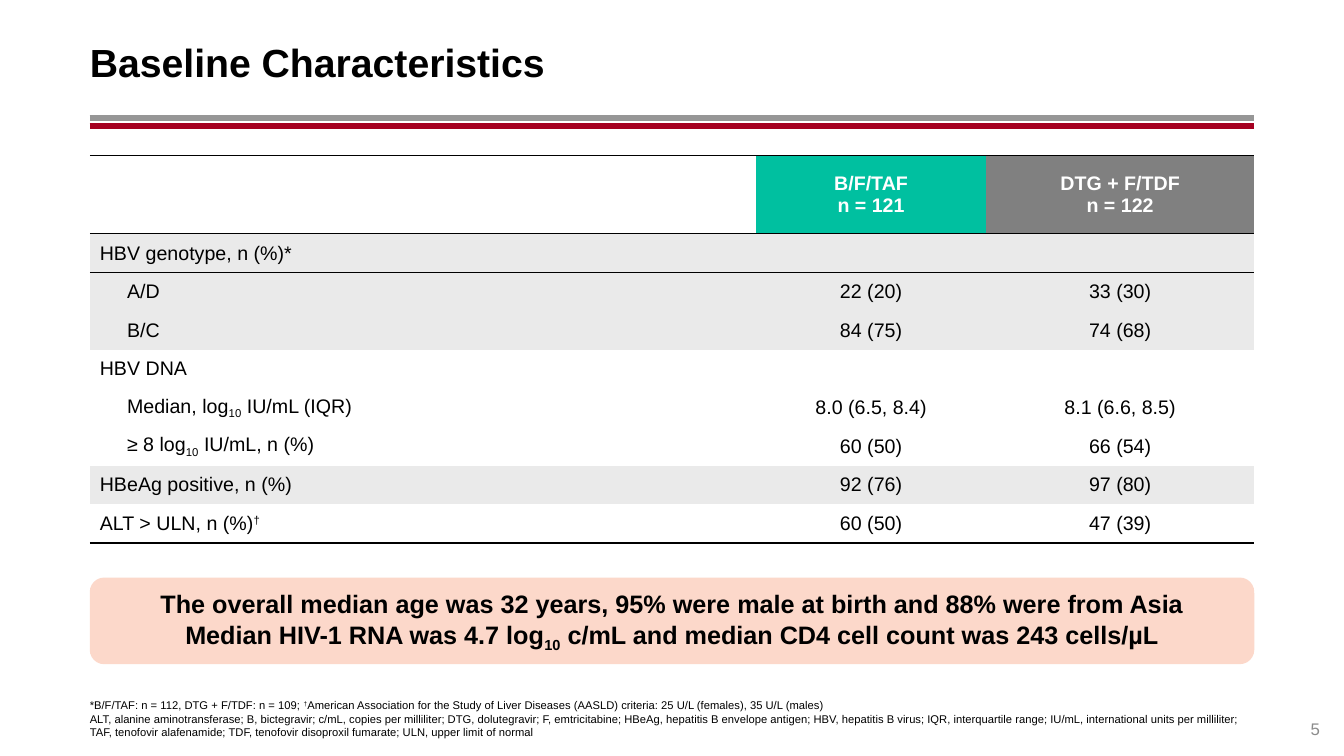
from pptx import Presentation
from pptx.dml.color import RGBColor
from pptx.enum.shapes import MSO_CONNECTOR, MSO_SHAPE
from pptx.enum.text import MSO_ANCHOR, PP_ALIGN
from pptx.oxml.ns import qn
from pptx.util import Inches, Pt
from lxml.etree import SubElement

BLACK = RGBColor(0x00, 0x00, 0x00)
WHITE = RGBColor(0xFF, 0xFF, 0xFF)
RULE_GRAY = RGBColor(0x96, 0x96, 0x96)
RULE_RED = RGBColor(0xA5, 0x00, 0x21)
NUMBER_GRAY = RGBColor(0x8C, 0x8C, 0x8C)
TEAL = RGBColor(0x00, 0xC0, 0xA0)
ARM_GRAY = RGBColor(0x80, 0x80, 0x80)
BAND_GRAY = RGBColor(0xEA, 0xEA, 0xEA)
PEACH = RGBColor(0xFC, 0xD8, 0xCA)

PLAIN_TABLE_STYLE = "{2D5ABB26-0587-4C30-8999-92F81FD0307C}"
SUBSCRIPT, SUPERSCRIPT = -25, 30
TEN = ("10", SUBSCRIPT)
DAGGER = ("†", SUPERSCRIPT)

LEFT, WIDTH = 0.89, 11.55
COLUMN_WIDTHS = [6.61, 2.28, 2.66]
HEADER_HEIGHT, TABLE_HEIGHT = 0.78, 3.85
CELL_INSET, SUBROW_INSET = 0.1, 0.37

ARMS = [("B/F/TAF", "n = 121", TEAL), ("DTG + F/TDF", "n = 122", ARM_GRAY)]

# Label runs, left inset, B/F/TAF value, DTG + F/TDF value, band colour
ROWS = [
    (["HBV genotype, n (%)*"], CELL_INSET, "", "", BAND_GRAY),
    (["A/D"], SUBROW_INSET, "22 (20)", "33 (30)", BAND_GRAY),
    (["B/C"], SUBROW_INSET, "84 (75)", "74 (68)", BAND_GRAY),
    (["HBV DNA"], CELL_INSET, "", "", WHITE),
    (["Median, log", TEN, " IU/mL (IQR)"], SUBROW_INSET, "8.0 (6.5, 8.4)", "8.1 (6.6, 8.5)", WHITE),
    (["≥ 8 log", TEN, " IU/mL, n (%)"], SUBROW_INSET, "60 (50)", "66 (54)", WHITE),
    (["HBeAg positive, n (%)"], CELL_INSET, "92 (76)", "97 (80)", BAND_GRAY),
    (["ALT > ULN, n (%)", DAGGER], CELL_INSET, "60 (50)", "47 (39)", WHITE),
]

CALLOUT = [
    ["The overall median age was 32 years, 95% were male at birth and 88% were from Asia"],
    ["Median HIV-1 RNA was 4.7 log", TEN, " c/mL and median CD4 cell count was 243 cells/µL"],
]

FOOTNOTES = [
    ["*B/F/TAF: n = 112, DTG + F/TDF: n = 109; ", DAGGER,
     "American Association for the Study of Liver Diseases (AASLD) criteria: "
     "25 U/L (females), 35 U/L (males)"],
    ["ALT, alanine aminotransferase; B, bictegravir; c/mL, copies per milliliter; "
     "DTG, dolutegravir; F, emtricitabine; HBeAg, hepatitis B envelope antigen; "
     "HBV, hepatitis B virus; IQR, interquartile range; "
     "IU/mL, international units per milliliter;"],
    ["TAF, tenofovir alafenamide; TDF, tenofovir disoproxil fumarate; "
     "ULN, upper limit of normal"],
]


class SlideBuilder:
    def __init__(self, slide, font="Arial"):
        self.slide = slide
        self.font = font

    def add_lines(self, frame, lines, size, color=BLACK, bold=False, align=PP_ALIGN.LEFT):
        """Add one paragraph per line; a run is a string or (string, baseline)."""
        for index, runs in enumerate(lines):
            paragraph = frame.paragraphs[0] if index == 0 else frame.add_paragraph()
            paragraph.alignment = align
            for item in runs:
                text, baseline = (item, 0) if isinstance(item, str) else item
                run = paragraph.add_run()
                run.text = text
                run.font.name = self.font
                run.font.size = Pt(size)
                run.font.bold = bold
                run.font.color.rgb = color
                if baseline:
                    run.font._element.set("baseline", str(baseline * 1000))

    def text(self, box, lines, size, anchor, **style):
        frame = self.slide.shapes.add_textbox(*map(Inches, box)).text_frame
        frame.word_wrap = True
        frame.vertical_anchor = anchor
        frame.margin_left = frame.margin_right = 0
        frame.margin_top = frame.margin_bottom = 0
        self.add_lines(frame, lines, size, **style)

    def rule(self, top, color):
        line = self.slide.shapes.add_connector(
            MSO_CONNECTOR.STRAIGHT, Inches(LEFT), Inches(top), Inches(LEFT + WIDTH), Inches(top))
        line.line.color.rgb = color
        line.line.width = Pt(4.25)
        SubElement(line._element.spPr, qn("a:effectLst"))

    def callout(self, box, lines):
        shape = self.slide.shapes.add_shape(MSO_SHAPE.ROUNDED_RECTANGLE, *map(Inches, box))
        shape.shadow.inherit = False
        shape.fill.solid()
        shape.fill.fore_color.rgb = PEACH
        shape.line.fill.background()
        shape.text_frame.word_wrap = True
        shape.text_frame.vertical_anchor = MSO_ANCHOR.MIDDLE
        self.add_lines(shape.text_frame, lines, 18, bold=True, align=PP_ALIGN.CENTER)

    def cell(self, cell, lines, fill=None, inset=0, borders=(), **style):
        """Fill one cell; borders names the ruled sides, lnT before lnB."""
        cell.vertical_anchor = MSO_ANCHOR.MIDDLE
        cell.margin_left, cell.margin_right = Inches(inset), 0
        cell.margin_top = cell.margin_bottom = Inches(0.01)
        properties = cell._tc.get_or_add_tcPr()
        for side in borders:
            border = SubElement(properties, qn(f"a:{side}"), w=str(Pt(1)))
            solid = SubElement(border, qn("a:solidFill"))
            SubElement(solid, qn("a:srgbClr"), val=str(BLACK))
        if fill is not None:
            cell.fill.solid()
            cell.fill.fore_color.rgb = fill
        self.add_lines(cell.text_frame, lines, 14, **style)

    def characteristics_table(self, top):
        table = self.slide.shapes.add_table(
            len(ROWS) + 1, len(COLUMN_WIDTHS),
            Inches(LEFT), Inches(top), Inches(WIDTH), Inches(TABLE_HEIGHT)).table
        table.first_row = table.horz_banding = False
        table._tbl.tblPr[0].text = PLAIN_TABLE_STYLE
        for column, width in zip(table.columns, COLUMN_WIDTHS):
            column.width = Inches(width)
        row_height = (TABLE_HEIGHT - HEADER_HEIGHT) / len(ROWS)
        for index, row in enumerate(table.rows):
            row.height = Inches(row_height if index else HEADER_HEIGHT)

        ruled = ("lnT", "lnB")
        self.cell(table.cell(0, 0), [], borders=ruled)
        for column, (arm, count, color) in enumerate(ARMS, 1):
            self.cell(table.cell(0, column), [[arm], [count]], color, borders=ruled,
                      color=WHITE, bold=True, align=PP_ALIGN.CENTER)

        for index, (label, inset, *values, band) in enumerate(ROWS, 1):
            borders = {1: ("lnT",), len(ROWS): ("lnB",)}.get(index, ())
            self.cell(table.cell(index, 0), [label], band, inset, borders)
            for column, value in enumerate(values, 1):
                self.cell(table.cell(index, column), [[value]] if value else [], band,
                          borders=borders, align=PP_ALIGN.CENTER)


def main():
    presentation = Presentation()
    presentation.slide_width = Inches(13.33)
    presentation.slide_height = Inches(7.5)
    builder = SlideBuilder(presentation.slides.add_slide(presentation.slide_layouts[6]))

    builder.rule(1.17, RULE_GRAY)
    builder.rule(1.25, RULE_RED)
    builder.text((LEFT, 0.18, WIDTH, 0.86), [["Baseline Characteristics"]], 28,
                 MSO_ANCHOR.MIDDLE, bold=True)
    builder.characteristics_table(1.54)
    builder.callout((LEFT, 5.73, WIDTH, 0.86), CALLOUT)
    builder.text((LEFT, 6.93, 12.21, 0.4), FOOTNOTES, 8, MSO_ANCHOR.BOTTOM)
    builder.text((12.44, 6.93, 0.65, 0.4), [["5"]], 12, MSO_ANCHOR.BOTTOM,
                 color=NUMBER_GRAY, align=PP_ALIGN.RIGHT)
    presentation.save("out.pptx")


if __name__ == "__main__":
    main()
